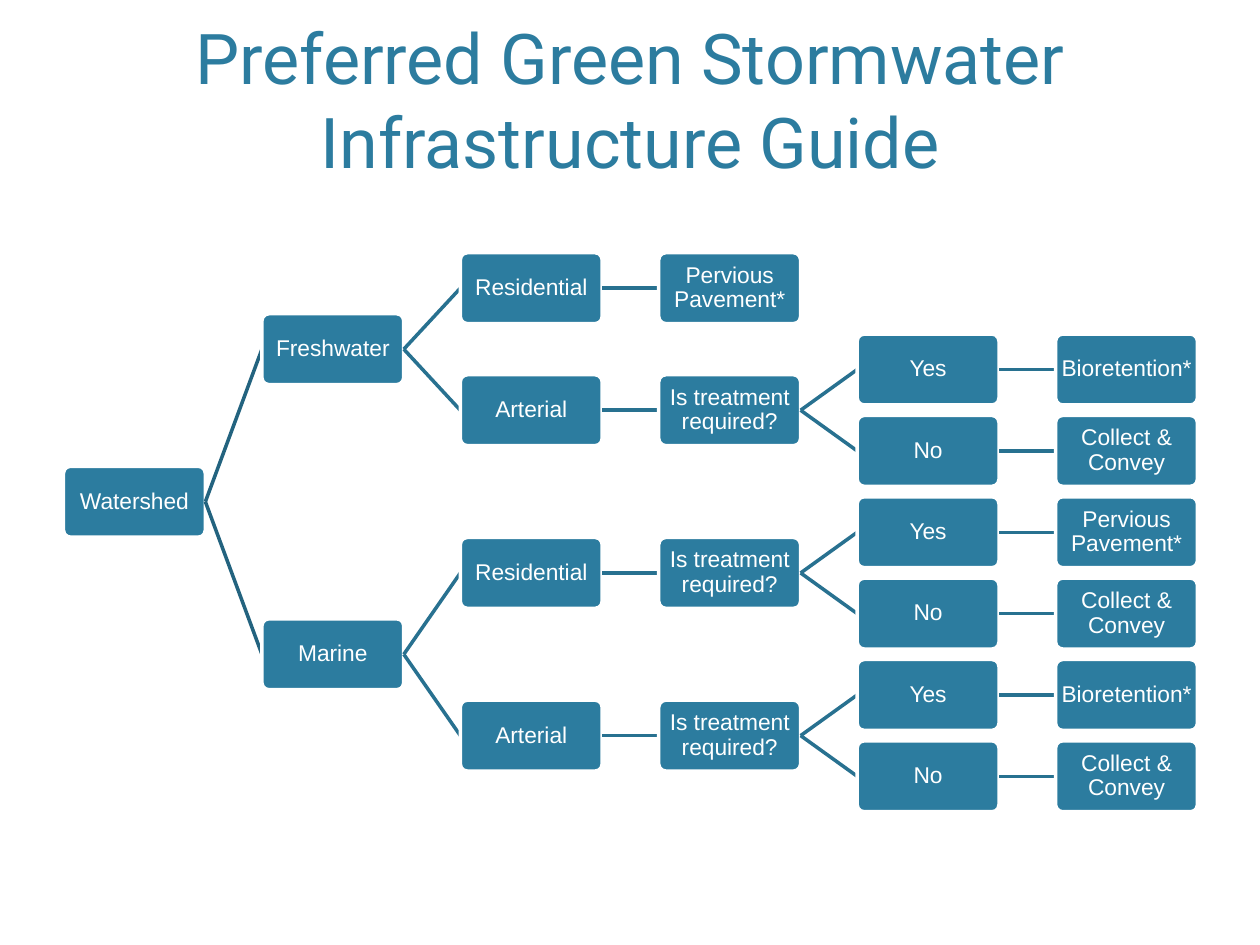
"""Builds a decision tree slide for choosing green stormwater infrastructure."""
from itertools import count

from lxml import etree
from pptx import Presentation
from pptx import util as u
from pptx.dml import color
from pptx.enum import shapes, text
from pptx.oxml import ns

LEFT, TOP = 1.28, 5.81
COLUMN_STEP, ROW_STEP = 4, 1.64
BOX_WIDTH, BOX_HEIGHT = 2.86, 1.43

COLLECT = ("No", [("Collect & Convey", [])])


def treatment(measure):
    return "Is treatment required?", [("Yes", [(measure, [])]), COLLECT]


GUIDE = ("Watershed", [
    ("Freshwater", [
        ("Residential", [("Pervious Pavement*", [])]),
        ("Arterial", [treatment("Bioretention*")]),
    ]),
    ("Marine", [
        ("Residential", [treatment("Pervious Pavement*")]),
        ("Arterial", [treatment("Bioretention*")]),
    ]),
])


def rgb(code):
    return color.RGBColor.from_string(code)


def assign(target, values):
    for name, value in values.items():
        setattr(target, name, value)


def arrange(branch, rows):
    label, options = branch
    placed = [arrange(option, rows) for option in options]
    if placed:
        middle = (placed[0][1] + placed[-1][1]) / 2
    else:
        middle = TOP + ROW_STEP * next(rows)
    return label, middle, placed


class TreeSlide:
    teal, white = "2C7C9F", "FFFFFF"
    trunk, twig = "23637F", "287190"
    title_font = {"name": "Roboto", "size": u.Pt(40)}
    box_font = {"name": "Arial", "size": u.Pt(13)}
    margins = ("margin_left", "margin_right", "margin_top", "margin_bottom")

    def __init__(self, slide):
        self.slide = slide

    def label(self, frame, wording, font, ink, frame_format, spacing):
        assign(frame, {"word_wrap": True, **frame_format})
        paragraph = frame.paragraphs[0]
        assign(paragraph, {"alignment": text.PP_ALIGN.CENTER, "line_spacing": spacing})
        run = paragraph.add_run()
        run.text = wording
        assign(run.font, font)
        run.font.color.rgb = rgb(ink)

    def title(self, wording):
        heading = self.slide.shapes.add_textbox(u.Cm(1.9), u.Cm(0.2), u.Cm(21.6), u.Cm(3.6))
        self.label(heading.text_frame, wording, self.title_font, self.teal,
                   {"vertical_anchor": text.MSO_ANCHOR.BOTTOM}, 1.0)

    def box(self, wording, left, middle):
        node = self.slide.shapes.add_shape(
            shapes.MSO_SHAPE.ROUNDED_RECTANGLE, u.Cm(left), u.Cm(middle - BOX_HEIGHT / 2),
            u.Cm(BOX_WIDTH), u.Cm(BOX_HEIGHT))
        node.adjustments[0] = 0.1
        node.shadow.inherit = False
        node.fill.solid()
        node.fill.fore_color.rgb = rgb(self.teal)
        node.line.color.rgb = rgb(self.white)
        node.line.width = u.Pt(2)
        frame_format = dict.fromkeys(self.margins, u.Cm(0.03))
        frame_format["vertical_anchor"] = text.MSO_ANCHOR.MIDDLE
        self.label(node.text_frame, wording, self.box_font, self.white, frame_format, 0.9)

    def link(self, start, end, ink):
        edge = self.slide.shapes.add_connector(
            shapes.MSO_CONNECTOR.STRAIGHT, *(u.Cm(value) for value in (*start, *end)))
        edge.line.color.rgb = rgb(ink)
        edge.line.width = u.Pt(2)
        etree.SubElement(edge.element.spPr, ns.qn("a:effectLst"))

    def tree(self, branch, level=0):
        wording, middle, options = branch
        left = LEFT + COLUMN_STEP * level
        self.box(wording, left, middle)
        for option in options:
            self.link((left + BOX_WIDTH, middle), (left + COLUMN_STEP, option[1]),
                      self.twig if level else self.trunk)
            self.tree(option, level + 1)


def main():
    deck = Presentation()
    assign(deck, {"slide_width": u.Cm(25.4), "slide_height": u.Cm(19.05)})
    guide = TreeSlide(deck.slides.add_slide(deck.slide_layouts[6]))
    guide.title("Preferred Green Stormwater Infrastructure Guide")
    guide.tree(arrange(GUIDE, count()))
    deck.save("out.pptx")


if __name__ == "__main__":
    main()
